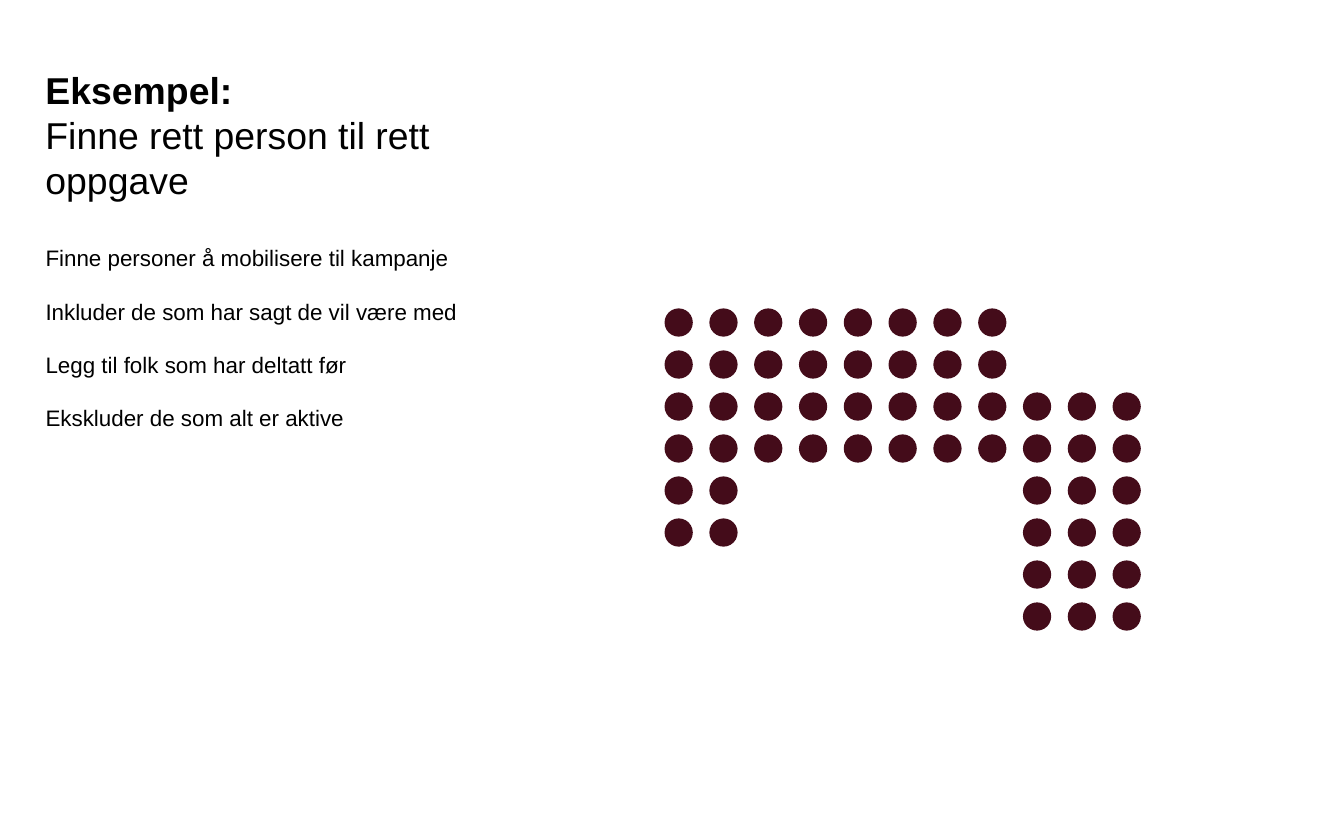
from pptx import Presentation
from pptx.dml.color import RGBColor
from pptx.enum.shapes import MSO_SHAPE
from pptx.enum.text import MSO_ANCHOR
from pptx.util import Pt

OVAL = MSO_SHAPE.OVAL
TOP, BOTTOM = MSO_ANCHOR.TOP, MSO_ANCHOR.BOTTOM

BLACK = RGBColor(0x00, 0x00, 0x00)
WINE = RGBColor(0x44, 0x0C, 0x1A)
FONT = "Arial"

POINTS = [
    "Finne personer å mobilisere til kampanje",
    "Inkluder de som har sagt de vil være med",
    "Legg til folk som har deltatt før",
    "Ekskluder de som alt er aktive",
]

# Blocks of people: first column, first row, columns, rows
DOT_BLOCKS = [(0, 0, 8, 4), (0, 4, 2, 2), (8, 2, 3, 6)]
DOT_SIZE = 14.4
COLUMN_STEP, ROW_STEP = 24, 22.5


def add_text_frame(s, left, top, width, height, anchor):
    tf = s.shapes.add_textbox(Pt(left), Pt(top), Pt(width), Pt(height)).text_frame
    tf.word_wrap = True
    tf.vertical_anchor = anchor
    tf.margin_left = tf.margin_right = tf.margin_top = tf.margin_bottom = Pt(7.2)
    return tf


def format_run(r, size, bold=False):
    r.font.name = FONT
    r.font.size = Pt(size)
    r.font.bold = bold
    r.font.color.rgb = BLACK


def add_title(s, left, top, width, height):
    tf = add_text_frame(s, left, top, width, height, BOTTOM)
    tf.text = "Eksempel:\vFinne rett person til rett oppgave"
    heading, subject = tf.paragraphs[0].runs
    format_run(heading, 20, bold=True)
    format_run(subject, 20)


def add_points(s, left, top, width, height):
    tf = add_text_frame(s, left, top, width, height, TOP)
    tf.text = "\n".join(POINTS)
    for p in tf.paragraphs:
        p.line_spacing = 1.15
        p.space_after = Pt(12)
        format_run(p.runs[0], 12)


def add_dot_blocks(s, left, top):
    for first_column, first_row, columns, rows in DOT_BLOCKS:
        for row in range(first_row, first_row + rows):
            for column in range(first_column, first_column + columns):
                dot = s.shapes.add_shape(
                    OVAL,
                    Pt(left + column * COLUMN_STEP), Pt(top + row * ROW_STEP),
                    Pt(DOT_SIZE), Pt(DOT_SIZE))
                dot.shadow.inherit = False
                dot.fill.solid()
                dot.fill.fore_color.rgb = WINE
                dot.line.color.rgb = WINE
                dot.line.width = Pt(0.75)


def main():
    prs = Presentation()
    prs.slide_width, prs.slide_height = Pt(720), Pt(450)
    s = prs.slides.add_slide(prs.slide_layouts[6])

    # Left column: points and title
    add_points(s, 17.3, 121.7, 251.3, 256.3)
    add_title(s, 17.3, 49, 221, 66.2)

    # Right side: the selected people
    add_dot_blocks(s, 356.4, 165.6)

    prs.save("out.pptx")


if __name__ == "__main__":
    main()
